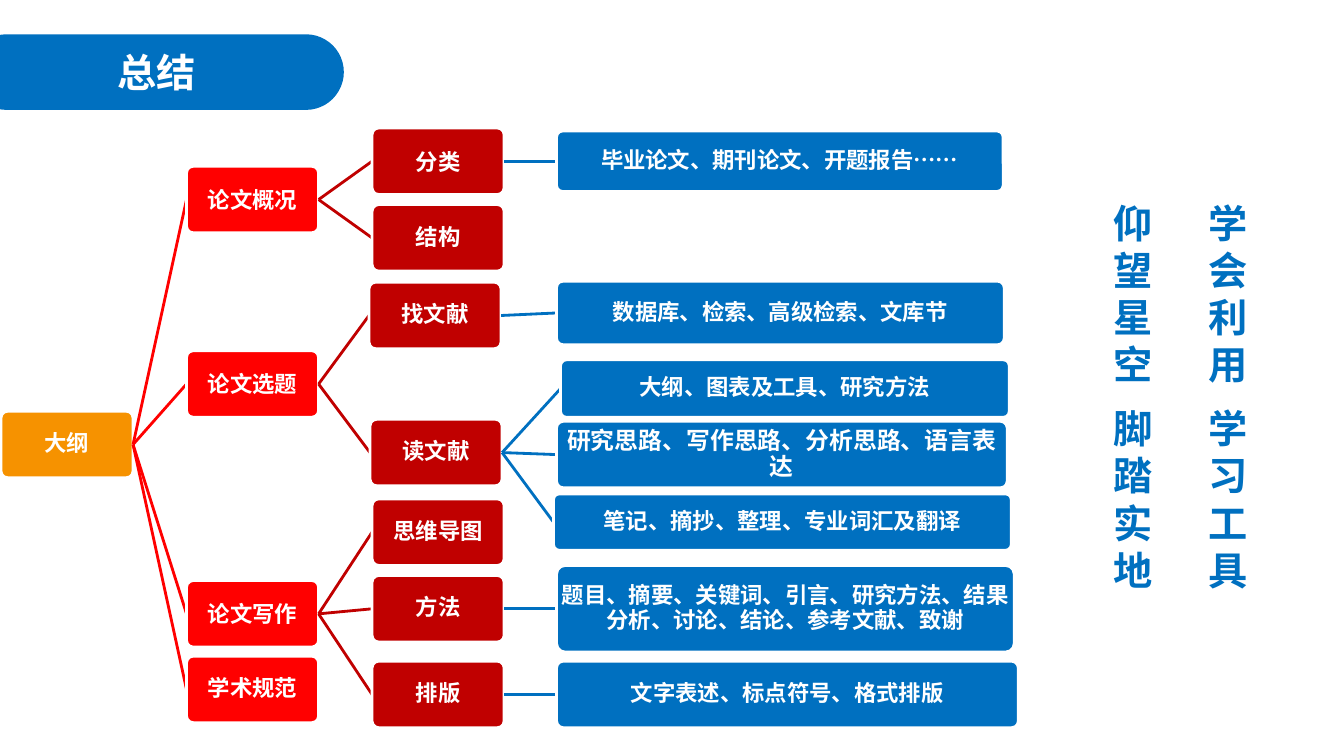
from dataclasses import dataclass, field

import lxml.etree
import pptx
import pptx.dml.color
import pptx.enum.shapes
import pptx.enum.text
import pptx.oxml.ns
import pptx.util

PX = 9144  # EMU in one px, 100 px to the inch


@dataclass(frozen=True)
class Theme:
    font: str = "Noto Sans CJK SC"
    white: str = "FFFFFF"
    blue: str = "0070C0"
    levels: tuple[str, ...] = ("F69200", "FF0000", "C00000", "0070C0")
    heading_size: int = 28
    node_size: int = 16
    wide_node_size: int = 17
    line_width: int = 2


THEME = Theme()


@dataclass(frozen=True)
class Node:
    text: str
    left: int
    top: int
    width: int = 131
    height: int = 66
    children: list["Node"] = field(default_factory=list)
    size: int = THEME.node_size
    spacing: float = 0.9


@dataclass(frozen=True)
class Motto:
    left: int
    width: int
    phrases: tuple[str, str]


OUTLINE = Node("大纲", 1, 408, children=[
    Node("论文概况", 185, 165, spacing=1.0, children=[
        Node("分类", 369, 127, spacing=1.0, children=[
            Node("毕业论文、期刊论文、开题报告……", 552, 130, 443, 60),
        ]),
        Node("结构", 369, 203),
    ]),
    Node("论文选题", 185, 348, spacing=1.0, children=[
        Node("找文献", 366, 280, children=[
            Node("数据库、检索、高级检索、文库节", 552, 279, 444, 63),
        ]),
        Node("读文献", 367, 416, children=[
            Node("大纲、图表及工具、研究方法", 556, 357, 445, 57),
            Node("研究思路、写作思路、分析思路、语言表达", 552, 418, 447,
                 size=THEME.wide_node_size),
            Node("笔记、摘抄、整理、专业词汇及翻译", 549, 490, 454, 56),
        ]),
    ]),
    Node("论文写作", 185, 576, spacing=1.0, children=[
        Node("思维导图", 369, 495),
        Node("方法", 369, 571, children=[
            Node("题目、摘要、关键词、引言、研究方法、结果分析、讨论、结论、参考文献、致谢",
                 552, 561, 454, 86),
        ]),
        Node("排版", 369, 656, children=[
            Node("文字表述、标点符号、格式排版", 552, 656, 458),
        ]),
    ]),
    Node("学术规范", 185, 651),
])

MOTTOS = [
    Motto(1104, 60, ("仰望星空", "脚踏实地")),
    Motto(1199, 47, ("学会利用", "学习工具")),
]


def px(*lengths: int) -> list[pptx.util.Emu]:
    return [pptx.util.Emu(length * PX) for length in lengths]


def rgb(colour: str) -> pptx.dml.color.RGBColor:
    return pptx.dml.color.RGBColor.from_string(colour)


def add_run(paragraph, text: str, size: int, colour: str):
    run = paragraph.add_run()
    run.text = text
    run.font.size = pptx.util.Pt(size)
    run.font.bold = True
    run.font.color.rgb = rgb(colour)
    run.font.name = THEME.font
    east_asian = lxml.etree.SubElement(run.font._element, pptx.oxml.ns.qn("a:ea"))
    east_asian.set("typeface", THEME.font)
    return run


def set_frame(frame, inset: int, anchor) -> None:
    frame.word_wrap = True
    frame.auto_size = pptx.enum.text.MSO_AUTO_SIZE.NONE
    frame.vertical_anchor = anchor
    frame.margin_left, frame.margin_top, frame.margin_right, frame.margin_bottom = px(*[inset] * 4)


def add_rounded(slide, left: int, top: int, width: int, height: int, radius: float, colour: str):
    shape = slide.shapes.add_shape(pptx.enum.shapes.MSO_SHAPE.ROUNDED_RECTANGLE,
                                   *px(left, top, width, height))
    shape.adjustments[0] = radius
    shape.shadow.inherit = False
    shape.fill.solid()
    shape.fill.fore_color.rgb = rgb(colour)
    shape.line.fill.background()
    return shape


def add_link(slide, colour: str):
    link = slide.shapes.add_connector(pptx.enum.shapes.MSO_CONNECTOR.STRAIGHT, 0, 0, 0, 0)
    link.line.color.rgb = rgb(colour)
    link.line.width = pptx.util.Pt(THEME.line_width)
    lxml.etree.SubElement(link._element.spPr, pptx.oxml.ns.qn("a:effectLst"))
    return link


def add_branch(slide, node: Node, level: int = 0, parent=None) -> None:
    """Draw a node over the link from its parent, then all its descendants."""
    colour = THEME.levels[level]
    link = add_link(slide, colour) if parent is not None else None
    box = add_rounded(slide, node.left, node.top, node.width, node.height, 0.1, colour)
    box.line.color.rgb = rgb(THEME.white)
    box.line.width = pptx.util.Pt(THEME.line_width)
    if link is not None:
        link.begin_connect(parent, 3)
        link.end_connect(box, 1)
    set_frame(box.text_frame, 1, pptx.enum.text.MSO_ANCHOR.MIDDLE)
    paragraph = box.text_frame.paragraphs[0]
    paragraph.alignment = pptx.enum.text.PP_ALIGN.CENTER
    paragraph.line_spacing = node.spacing
    add_run(paragraph, node.text, node.size, THEME.white)
    for child in node.children:
        add_branch(slide, child, level + 1, box)


def add_heading(slide, text: str) -> None:
    pill = add_rounded(slide, -31, 34, 372, 75, 0.5, THEME.blue)
    title = slide.shapes.title
    title.left, title.top, title.width, title.height = px(0, 34, 310, 75)
    set_frame(title.text_frame, 0, pptx.enum.text.MSO_ANCHOR.MIDDLE)
    paragraph = title.text_frame.paragraphs[0]
    paragraph.alignment = pptx.enum.text.PP_ALIGN.CENTER
    add_run(paragraph, text, THEME.heading_size, THEME.white)
    title.element.addprevious(pill.element)


def add_motto(slide, motto: Motto) -> None:
    """Stack the characters in a box one character wide."""
    column = slide.shapes.add_textbox(*px(motto.left, 198, motto.width, 395))
    frame = column.text_frame
    set_frame(frame, 0, pptx.enum.text.MSO_ANCHOR.TOP)
    for index, phrase in enumerate(motto.phrases):
        paragraph = frame.add_paragraph() if index else frame.paragraphs[0]
        paragraph.space_before = paragraph.space_after = pptx.util.Pt(6)
        run = add_run(paragraph, phrase, THEME.heading_size, THEME.blue)
        run.font._element.set("spc", "600")


def main() -> None:
    presentation = pptx.Presentation()
    presentation.slide_width, presentation.slide_height = px(1333, 750)
    slide = presentation.slides.add_slide(presentation.slide_layouts[5])
    add_heading(slide, "总结")
    add_branch(slide, OUTLINE)
    for motto in MOTTOS:
        add_motto(slide, motto)
    presentation.save("out.pptx")


if __name__ == "__main__":
    main()
